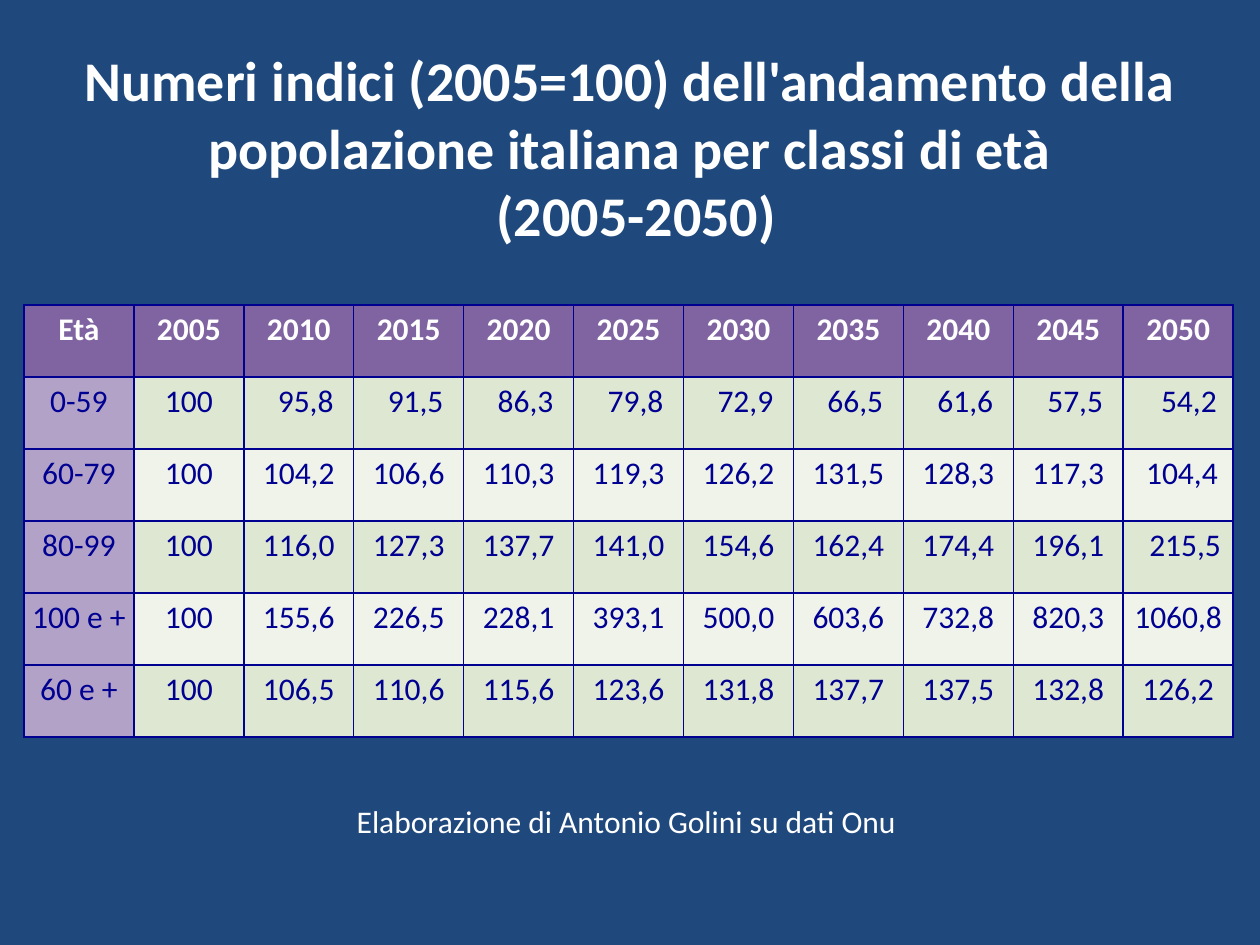
from pptx import Presentation
from pptx.dml.color import RGBColor as RGB
from pptx.enum.text import MSO_ANCHOR as ANCHOR, PP_ALIGN as ALIGN
from pptx.oxml.ns import qn
from pptx.util import Inches, Pt
from lxml import etree

COLORS = {
    "background": "1F497D", "white": "FFFFFF", "navy": "000091",
    "header": "8064A2", "age": "B3A2C7", "odd": "DEE7D1", "even": "EFF3EA",
}
FONT = "Calibri"
YEARS = range(2005, 2051, 5)
INDICES = {
    "0-59": "100 95,8 91,5 86,3 79,8 72,9 66,5 61,6 57,5 54,2",
    "60-79": "100 104,2 106,6 110,3 119,3 126,2 131,5 128,3 117,3 104,4",
    "80-99": "100 116,0 127,3 137,7 141,0 154,6 162,4 174,4 196,1 215,5",
    "100 e +": "100 155,6 226,5 228,1 393,1 500,0 603,6 732,8 820,3 1060,8",
    "60 e +": "100 106,5 110,6 115,6 123,6 131,8 137,7 137,5 132,8 126,2",
}
INDENTS = {(1, c): 0.11 for c in range(2, 10)} | {(1, 10): 0.17, (2, 10): 0.06, (3, 10): 0.11}


def rgb(name):
    """Return the named colour."""
    return RGB.from_string(COLORS[name])


def style(p, size, color, bold=False):
    """Centre a paragraph and set its font."""
    p.alignment = ALIGN.CENTER
    p.font.name = FONT
    p.font.size = Pt(size)
    p.font.bold = bold
    p.font.color.rgb = rgb(color)


def add_text(s, box, text, size, bold=False, anchor=ANCHOR.TOP):
    """Add centred white text in the given box."""
    tf = s.shapes.add_textbox(*map(Inches, box)).text_frame
    tf.word_wrap = True
    tf.vertical_anchor = anchor
    tf.text = text
    style(tf.paragraphs[0], size, "white", bold)


def add_borders(cell):
    """Draw a navy line on each side of a cell."""
    tc_pr = cell._tc.get_or_add_tcPr()
    for i, side in enumerate(("lnL", "lnR", "lnT", "lnB")):
        ln = etree.Element(qn(f"a:{side}"), w=str(Pt(1)))
        fill = etree.SubElement(ln, qn("a:solidFill"))
        etree.SubElement(fill, qn("a:srgbClr"), val=COLORS["navy"])
        tc_pr.insert(i, ln)


def cell_fill(row, col):
    """Choose the fill name for a table position."""
    if row == 0:
        return "header"
    if col == 0:
        return "age"
    return "odd" if row % 2 else "even"


def add_index_table(s, box):
    """Add the table of index numbers by age class and year."""
    rows = [["Età", *map(str, YEARS)]]
    rows += [[age, *values.split()] for age, values in INDICES.items()]
    table = s.shapes.add_table(len(rows), len(rows[0]), *map(Inches, box)).table
    for r, values in enumerate(rows):
        for c, value in enumerate(values):
            cell = table.cell(r, c)
            cell.margin_left = Inches(0.05 + INDENTS.get((r, c), 0))
            cell.margin_right = Inches(0.05)
            cell.margin_top = cell.margin_bottom = 0
            cell.fill.solid()
            cell.fill.fore_color.rgb = rgb(cell_fill(r, c))
            cell.text = value
            p = cell.text_frame.paragraphs[0]
            p.line_spacing = 1.15
            style(p, 18, "navy" if r else "white", bold=r == 0)
            add_borders(cell)


def main():
    """Build and save the slide."""
    prs = Presentation()
    prs.slide_width, prs.slide_height = Inches(10), Inches(7.5)
    s = prs.slides.add_slide(prs.slide_layouts[6])
    s.background.fill.solid()
    s.background.fill.fore_color.rgb = rgb("background")
    title = ("Numeri indici (2005=100) dell'andamento della popolazione "
             "italiana per classi di età\v (2005-2050)")
    add_text(s, (0.5, 0.3, 9, 1.73), title, 32, True, ANCHOR.MIDDLE)
    add_index_table(s, (0.19, 2.42, 9.6, 3.43))
    add_text(s, (0.2, 6.32, 9.6, 0.4), "Elaborazione di Antonio Golini su dati Onu ", 18)
    prs.save("out.pptx")


if __name__ == "__main__":
    main()
